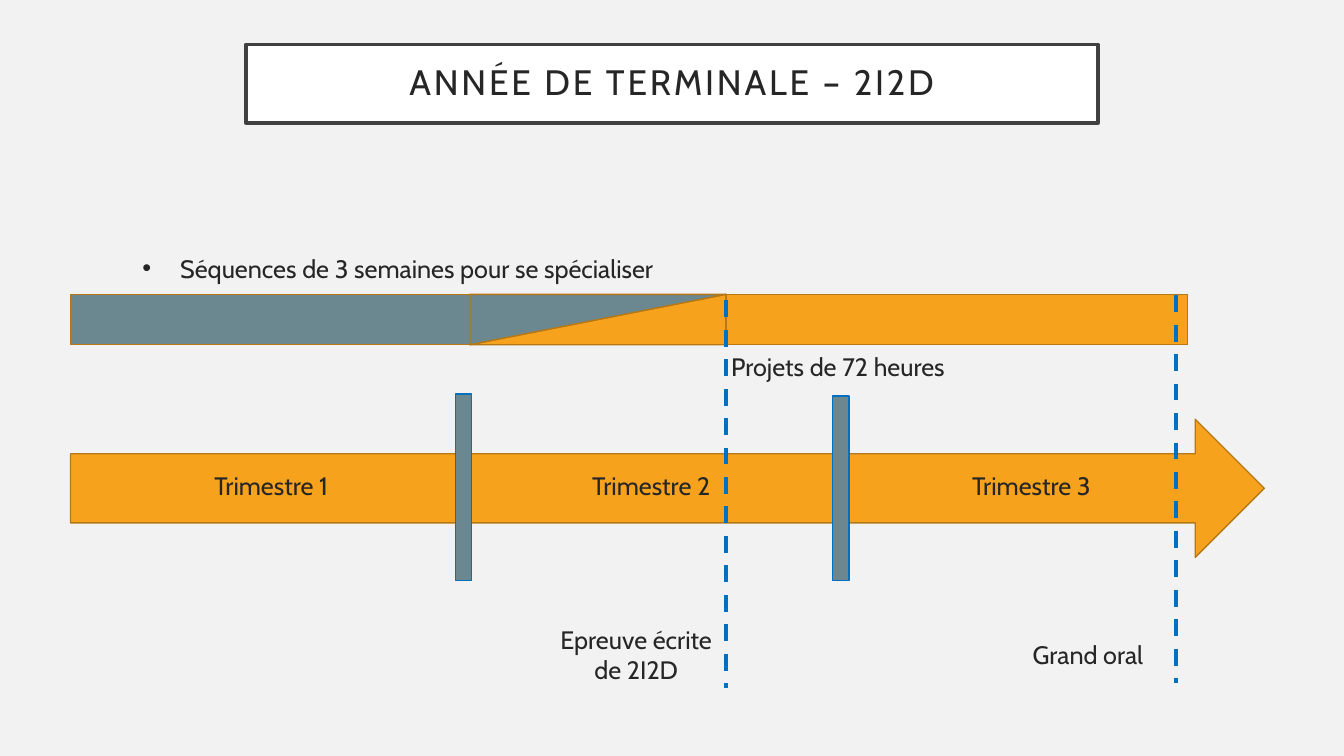
"""Build the timeline slide of the final school year in 2I2D."""
from dataclasses import dataclass

from lxml.etree import SubElement
from pptx import Presentation
from pptx.dml.color import RGBColor
from pptx.enum.dml import MSO_LINE
from pptx.enum.shapes import MSO_CONNECTOR, MSO_SHAPE
from pptx.enum.text import MSO_ANCHOR, MSO_AUTO_SIZE, PP_ALIGN
from pptx.oxml.ns import qn
from pptx.util import Inches, Pt


@dataclass(frozen=True)
class Theme:
    font: str = "Cabin"
    title_size: float = 25.2
    label_size: float = 18
    background: str = "F2F2F2"
    text: str = "262626"
    title_fill: str = "FFFFFF"
    title_line: str = "404040"
    project: str = "F6A21D"
    project_line: str = "B67815"
    sequence: str = "6B8891"
    exam: str = "0070C0"


THEME = Theme()
TITLE = "ANNÉE DE TERMINALE – 2I2D"
SEQUENCES = "Séquences de 3 semaines pour se spécialiser"
PROJECTS = "Projets de 72 heures"
TERMS = ["Trimestre 1", "Trimestre 2", "Trimestre 3"]
TERM_LIMITS = [(4.52, 3.91), (8.26, 3.93)]
EXAMS = [
    ("Epreuve écrite de 2I2D", (5.44, 6.14, 1.74, 0.92), 7.2, 2.98),
    ("Grand oral", (9.92, 6.29, 1.74, 0.41), 11.66, 2.93),
]

YEAR_START, OVERLAP_START, OVERLAP_END, PROJECT_END = 0.7, 4.66, 7.2, 11.78
BAR_TOP, BAR_HEIGHT = 2.92, 0.5
TERM_LEFT, TERM_TOP, TERM_STEP = 1.49, 4.62, 3.77
LIMIT_BOTTOM, EXAM_LENGTH = 5.76, 3.85


def rgb(color):
    return RGBColor.from_string(color)


def paint(shape, fill, line, width=1):
    shape.fill.solid()
    shape.fill.fore_color.rgb = rgb(fill)
    shape.line.color.rgb = rgb(line)
    shape.line.width = Pt(width)


def add_block(slide, kind, area, fill, line):
    block = slide.shapes.add_shape(kind, *map(Inches, area))
    block.shadow.inherit = False
    paint(block, fill, line)
    return block


def place(shape, area):
    shape.left, shape.top, shape.width, shape.height = map(Inches, area)


def write(shape, words, size=THEME.label_size):
    frame = shape.text_frame
    frame.text = words
    frame.word_wrap = True
    frame.auto_size = MSO_AUTO_SIZE.NONE
    paragraph = frame.paragraphs[0]
    paragraph.alignment = PP_ALIGN.CENTER
    paragraph.space_before = Pt(0)
    paragraph.font.name = THEME.font
    paragraph.font.size = Pt(size)
    paragraph.font.color.rgb = rgb(THEME.text)
    return paragraph


def add_label(slide, words, area):
    label = slide.shapes.add_textbox(*map(Inches, area))
    write(label, words)
    return label


def add_title(slide):
    title = slide.shapes.title
    place(title, (2.44, 0.44, 8.45, 0.78))
    paint(title, THEME.title_fill, THEME.title_line, 2.5)
    paragraph = write(title, TITLE, THEME.title_size)
    paragraph.line_spacing = 0.9
    paragraph.runs[0].font._element.set("spc", "200")
    frame = title.text_frame
    frame.vertical_anchor = MSO_ANCHOR.MIDDLE
    frame.margin_left = frame.margin_right = Inches(0.2)
    frame.margin_top = frame.margin_bottom = Inches(0.2)


def add_terms(slide):
    add_block(slide, MSO_SHAPE.RIGHT_ARROW, (YEAR_START, 4.16, 11.84, 1.37),
              THEME.project, THEME.project_line)
    for left, top in TERM_LIMITS:
        add_block(slide, MSO_SHAPE.RECTANGLE, (left, top, 0.16, LIMIT_BOTTOM - top),
                  THEME.sequence, THEME.exam)
    for index, term in enumerate(TERMS):
        add_label(slide, term, (TERM_LEFT + index * TERM_STEP, TERM_TOP, 2.4, 0.44))


def add_phases(slide):
    phases = [
        (MSO_SHAPE.ISOSCELES_TRIANGLE, OVERLAP_START, OVERLAP_END, THEME.project, 0),
        (MSO_SHAPE.RECTANGLE, OVERLAP_END, PROJECT_END, THEME.project, 0),
        (MSO_SHAPE.ISOSCELES_TRIANGLE, OVERLAP_START, OVERLAP_END, THEME.sequence, 180),
        (MSO_SHAPE.RECTANGLE, YEAR_START, OVERLAP_START, THEME.sequence, 0),
    ]
    for kind, start, end, fill, rotation in phases:
        phase = add_block(slide, kind, (start, BAR_TOP, end - start, BAR_HEIGHT),
                          fill, THEME.project_line)
        phase.rotation = rotation
        if kind == MSO_SHAPE.ISOSCELES_TRIANGLE:
            phase.adjustments[0] = 1

    sequences = slide.placeholders[1]
    place(sequences, (YEAR_START, 2.46, 6.49, 0.52))
    sequences.text_frame.text = SEQUENCES
    properties = sequences.text_frame.paragraphs[0]._p.get_or_add_pPr()
    properties.set("marL", "0")
    properties.set("indent", "0")
    SubElement(properties, qn("a:buNone"))
    write(sequences, SEQUENCES)

    projects = add_label(slide, PROJECTS,
                         (OVERLAP_START, 3.44, PROJECT_END - OVERLAP_START, 0.52))
    projects.text_frame.margin_left = Inches(0.28)


def add_exams(slide):
    for exam, area, x, top in EXAMS:
        marker = slide.shapes.add_connector(
            MSO_CONNECTOR.STRAIGHT, *map(Inches, (x, top, x, top + EXAM_LENGTH)))
        marker.line.color.rgb = rgb(THEME.exam)
        marker.line.width = Pt(3)
        marker.line.dash_style = MSO_LINE.DASH
        SubElement(marker._element.spPr, qn("a:effectLst"))
        add_label(slide, exam, area)


def main():
    deck = Presentation()
    deck.slide_width, deck.slide_height = Inches(13.33), Inches(7.5)
    slide = deck.slides.add_slide(deck.slide_layouts[1])
    slide.background.fill.solid()
    slide.background.fill.fore_color.rgb = rgb(THEME.background)
    add_title(slide)
    add_terms(slide)
    add_phases(slide)
    add_exams(slide)
    deck.save("out.pptx")


if __name__ == "__main__":
    main()
